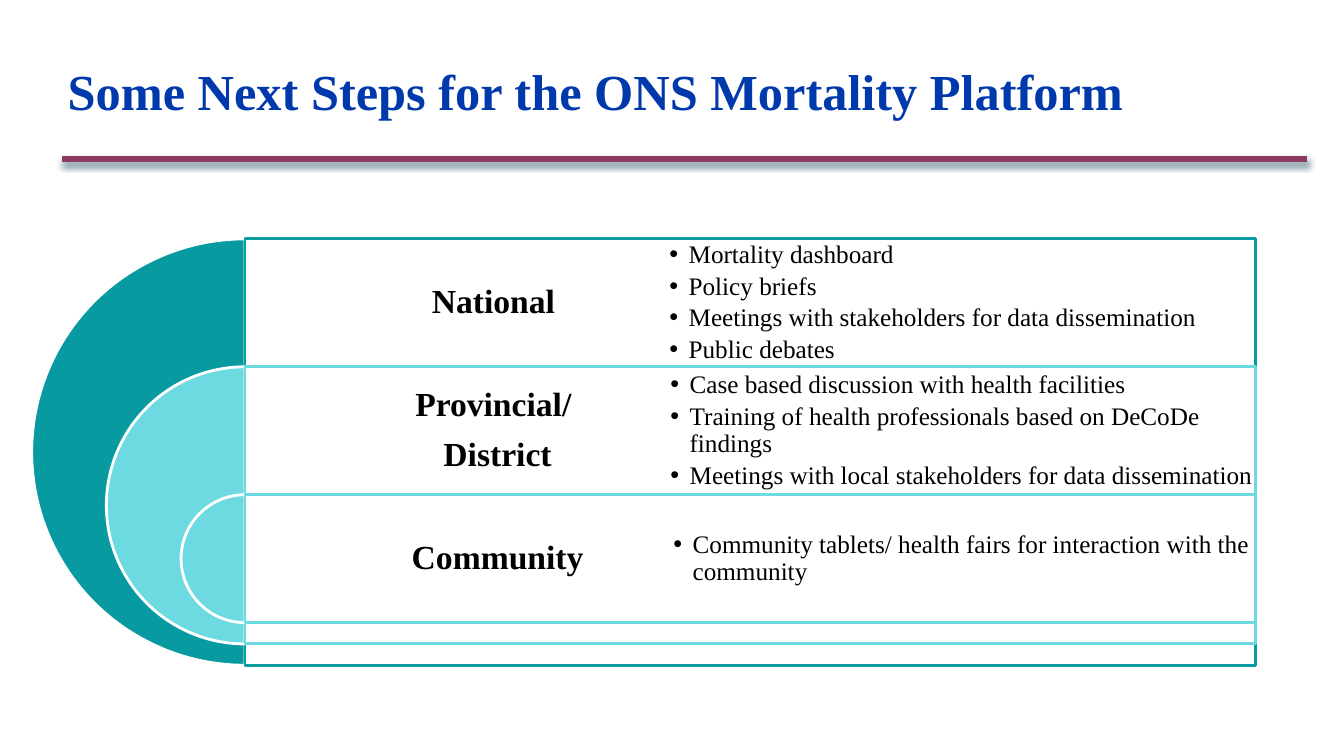
from dataclasses import dataclass

from lxml.etree import SubElement
from pptx import Presentation
from pptx.dml.color import RGBColor
from pptx.enum.shapes import MSO_CONNECTOR, MSO_SHAPE
from pptx.enum.text import MSO_ANCHOR, PP_ALIGN
from pptx.oxml.ns import qn
from pptx.shapes.autoshape import Shape
from pptx.util import Inches, Pt

HUES = {
    "teal": "089AA1",
    "aqua": "6DDAE2",
    "white": "FFFFFF",
    "black": "000000",
    "title": "0039AC",
    "rule": "8E3A60",
    "shade": "003148",
}
FONT = "Times New Roman"
WIDE, HIGH = 13.33, 7.5
UNIT = 4.23 / 20
AXIS, TOP = 2.43, 2.37
SPAN = 10.02
ROWS = 6
STEP = 7


@dataclass
class Tier:
    hue: str
    name: list[str]
    items: list[str]
    left: float
    width: float


TIERS = [
    Tier("teal", ["National "], [
        "Mortality dashboard",
        "Policy briefs",
        "Meetings with stakeholders for data dissemination",
        "Public debates",
    ], 6.37, 6.46),
    Tier("aqua", ["Provincial/ ", "District"], [
        "Case based discussion with health facilities",
        "Training of health professionals based on DeCoDe findings",
        "Meetings with local stakeholders for data dissemination",
    ], 6.38, 6.37),
    Tier("aqua", ["Community"], [
        "Community tablets/ health fairs for interaction with the community",
    ], 6.41, 6.26),
]

deck = Presentation()
deck.slide_width, deck.slide_height = Inches(WIDE), Inches(HIGH)
slide = deck.slides.add_slide(deck.slide_layouts[6])


def tint(name: str) -> RGBColor:
    return RGBColor.from_string(HUES[name])


def write(lines: list[str], left: float, top: float, width: float, high: float, *,
          size: float, hue: str = "black", bold: bool = False,
          align: PP_ALIGN = PP_ALIGN.LEFT, pads: tuple = (0.1, 0.1, 0.1, 0.1),
          lead: float = 1.0, after: float = 0, dots: bool = False) -> None:
    box = slide.shapes.add_textbox(*map(Inches, (left, top, width, high)))
    frame = box.text_frame
    frame.word_wrap = True
    frame.vertical_anchor = MSO_ANCHOR.MIDDLE
    (frame.margin_left, frame.margin_top,
     frame.margin_right, frame.margin_bottom) = map(Inches, pads)
    for i, line in enumerate(lines):
        para = frame.add_paragraph() if i else frame.paragraphs[0]
        para.alignment = align
        para.line_spacing = lead
        para.space_after = Pt(after)
        if dots:
            props = para._p.get_or_add_pPr()
            props.set("marL", str(Inches(0.19)))
            props.set("indent", str(-Inches(0.19)))
            SubElement(props, qn("a:buFont")).set("typeface", "Arial")
            SubElement(props, qn("a:buChar")).set("char", "•")
        run = para.add_run()
        run.text = line
        run.font.name, run.font.size, run.font.bold = FONT, Pt(size), bold
        run.font.color.rgb = tint(hue)


def draw(kind: MSO_SHAPE, left: float, top: float, width: float, high: float,
         fill: str, line: str) -> Shape:
    form = slide.shapes.add_shape(kind, *map(Inches, (left, top, width, high)))
    form.shadow.inherit = False
    form.fill.solid()
    form.fill.fore_color.rgb = tint(fill)
    form.line.color.rgb = tint(line)
    form.line.width = Pt(2)
    return form


def stack(tier: Tier, rank: int) -> None:
    top = TOP + rank * ROWS * UNIT
    size = (20 - rank * STEP) * UNIT
    band = ROWS * UNIT
    disc = draw(MSO_SHAPE.PIE, AXIS - size / 2, top, size, size, tier.hue, "white")
    disc.adjustments[0], disc.adjustments[1] = 54, 162
    pane = draw(MSO_SHAPE.RECTANGLE, AXIS, top, SPAN, size, "white", tier.hue)
    tone = pane._element.spPr.find(qn("a:solidFill"))[0]
    SubElement(tone, qn("a:alpha")).set("val", "90000")
    write(tier.name, AXIS, top, SPAN / 2, band, size=24, bold=True,
          align=PP_ALIGN.CENTER, lead=0.9, after=9.7)
    write(tier.items, tier.left, top, tier.width, band, size=18,
          pads=(0.27,) * 4, lead=0.9, after=3.1, dots=True)


def rule() -> None:
    bar = slide.shapes.add_connector(
        MSO_CONNECTOR.STRAIGHT, *map(Inches, (0.62, 1.58, 12.96, 1.58)))
    bar.line.color.rgb = tint("rule")
    bar.line.width = Pt(4.5)
    fx = SubElement(bar._element.spPr, qn("a:effectLst"))
    cast = SubElement(fx, qn("a:outerShdw"), blurRad=str(Pt(4.5)),
                      dist=str(Pt(3)), dir="5400000", rotWithShape="0")
    tone = SubElement(cast, qn("a:srgbClr"), val=HUES["shade"])
    SubElement(tone, qn("a:alpha"), val="48000")


def main() -> None:
    rule()
    for rank, tier in enumerate(TIERS):
        stack(tier, rank)
    write(["Some Next Steps for the ONS Mortality Platform"], 0.67, 0.25, 12, 1.25,
          size=36, hue="title", bold=True, pads=(0, 0.05, 0, 0))
    deck.save("out.pptx")


if __name__ == "__main__":
    main()
